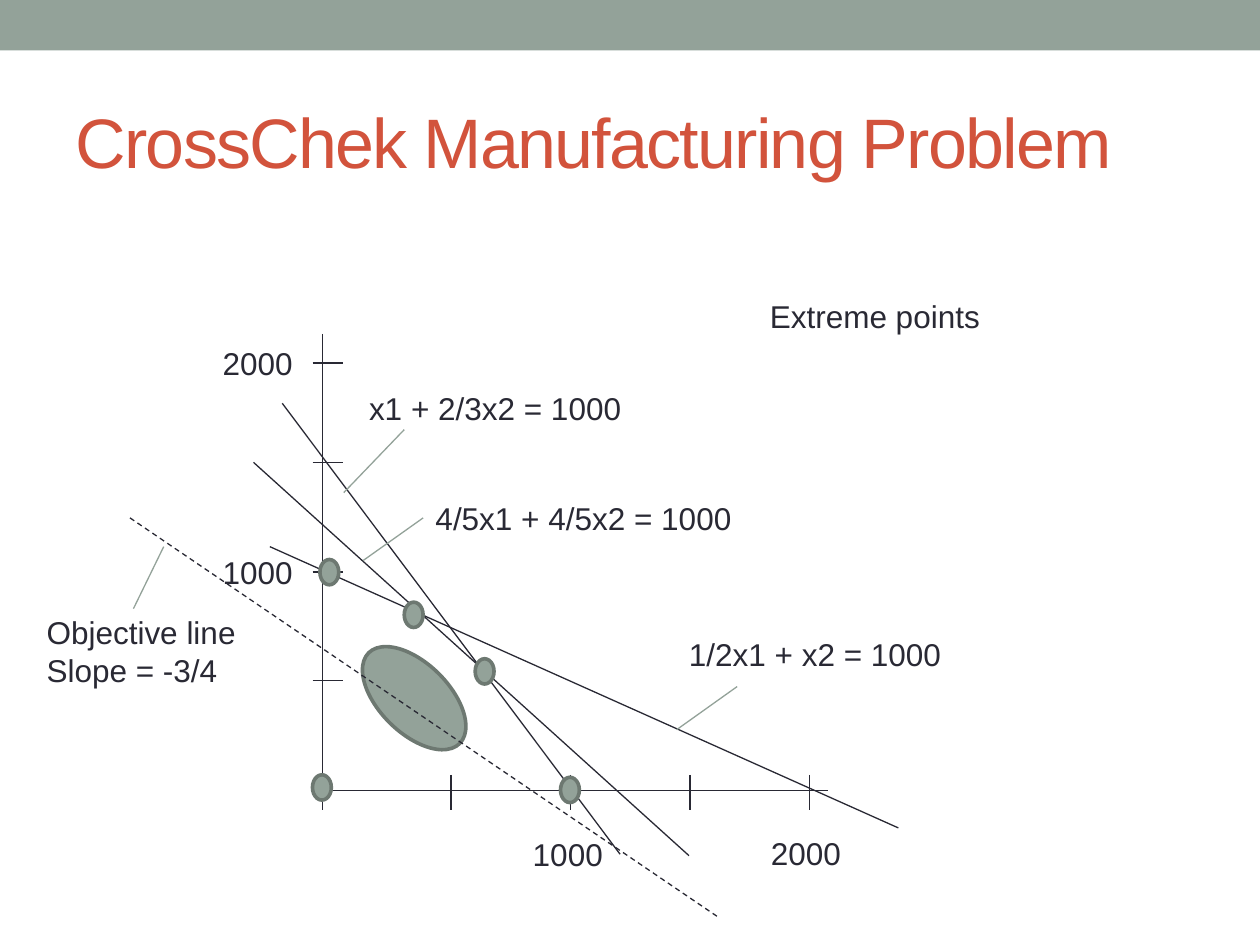
"""Build the slide with the graphical solution of the CrossChek problem."""
from dataclasses import dataclass

from lxml import etree
from pptx import Presentation
from pptx.dml.color import RGBColor
from pptx.enum.dml import MSO_LINE
from pptx.enum.shapes import MSO_CONNECTOR, MSO_SHAPE
from pptx.enum.text import MSO_ANCHOR, PP_ALIGN
from pptx.oxml.ns import qn
from pptx.util import Cm, Pt

STRAIGHT = MSO_CONNECTOR.STRAIGHT
RECT, OVAL = MSO_SHAPE.RECTANGLE, MSO_SHAPE.OVAL
LEFT, MIDDLE = PP_ALIGN.LEFT, MSO_ANCHOR.MIDDLE
DASH = MSO_LINE.DASH


@dataclass(frozen=True)
class Theme:
    font: str = "Arial"
    title_size: float = 40
    label_size: float = 18
    thin: float = 0.75
    outline: float = 2.08
    ink: RGBColor = RGBColor(0x29, 0x29, 0x34)
    sage: RGBColor = RGBColor(0x93, 0xA2, 0x99)
    edge: RGBColor = RGBColor(0x6D, 0x78, 0x71)
    title: RGBColor = RGBColor(0xD2, 0x53, 0x3C)


theme = Theme()
prs = Presentation()
prs.slide_width, prs.slide_height = Cm(25.4), Cm(19.05)
s = prs.slides.add_slide(prs.slide_layouts[5])


def add_shape(kind, x, y, w, h, outlined=True):
    sp = s.shapes.add_shape(kind, Cm(x), Cm(y), Cm(w), Cm(h))
    sp.shadow.inherit = False
    sp.fill.solid()
    sp.fill.fore_color.rgb = theme.sage
    if outlined:
        sp.line.color.rgb = theme.edge
        sp.line.width = Pt(theme.outline)
    else:
        sp.line.fill.background()
    return sp


def add_line(x1, y1, x2, y2, color=theme.ink):
    cn = s.shapes.add_connector(STRAIGHT, Cm(x1), Cm(y1), Cm(x2), Cm(y2))
    cn.line.color.rgb = color
    cn.line.width = Pt(theme.thin)
    etree.SubElement(cn._element.spPr, qn("a:effectLst"))
    return cn


add_shape(RECT, 0, 0, 25.4, 1.02, outlined=False)
feasible = add_shape(OVAL, 7.65, 12.78, 1.4, 2.59)
feasible.rotation = 314.8

title = s.shapes.title
title.left, title.top, title.width, title.height = Cm(1.27), Cm(1.47), Cm(22.86), Cm(2.74)
tf = title.text_frame
tf.text = "CrossChek Manufacturing Problem"
tf.vertical_anchor = MIDDLE
p = tf.paragraphs[0]
p.alignment = LEFT
r = p.runs[0]
r.font.name, r.font.size = theme.font, Pt(theme.title_size)
r.font.color.rgb = theme.title
r._r.get_or_add_rPr().set("spc", "-100")

add_line(6.5, 6.73, 6.5, 16.33)
add_line(6.3, 15.93, 16.69, 15.93)
for i in range(4):
    x = 9.09 + 2.41 * i
    add_line(x, 15.62, x, 16.33)
for y in (13.72, 11.53, 9.32, 7.32):
    add_line(6.3, y, 6.91, y)

constraints = [
    (5.44, 11.02, 18.11, 16.69),
    (5.69, 8.13, 12.5, 17.22),
    (5.11, 9.32, 13.89, 17.25),
]
for ends in constraints:
    add_line(*ends)
objective = add_line(2.62, 10.44, 14.48, 18.49)
objective.line.dash_style = DASH

extreme_points = [(6.45, 11.28), (8.15, 12.14), (6.3, 15.62), (11.3, 15.67), (9.58, 13.28)]
for x, y in extreme_points:
    add_shape(OVAL, x, y, 0.38, 0.51)

leaders = [
    (8.15, 8.66, 6.93, 9.93),
    (8.53, 10.44, 7.32, 11.3),
    (14.86, 13.84, 13.64, 14.71),
    (3.3, 11.02, 2.69, 12.27),
]
for ends in leaders:
    add_line(*ends, color=theme.sage)

labels = [
    ("1000", 4.24, 11.02, 2.39, 1.02),
    ("2000", 4.24, 6.81, 2.39, 1.02),
    ("1000", 10.49, 16.71, 2.39, 1.02),
    ("2000", 15.29, 16.69, 2.39, 1.02),
    ("x1 + 2/3x2 = 1000", 7.19, 7.72, 6.63, 1.02),
    ("4/5x1 + 4/5x2 = 1000", 8.53, 9.93, 6.63, 1.02),
    ("1/2x1 + x2 = 1000", 13.64, 12.67, 6.63, 1.02),
    ("Objective line\nSlope = -3/4", 0.69, 12.24, 6.63, 1.8),
    ("Extreme points", 15.27, 5.87, 6.63, 1.02),
]
for text, x, y, w, h in labels:
    tf = s.shapes.add_textbox(Cm(x), Cm(y), Cm(w), Cm(h)).text_frame
    tf.word_wrap = True
    tf.text = text
    for p in tf.paragraphs:
        r = p.runs[0]
        r.font.name, r.font.size = theme.font, Pt(theme.label_size)
        r.font.color.rgb = theme.ink

prs.save("out.pptx")
